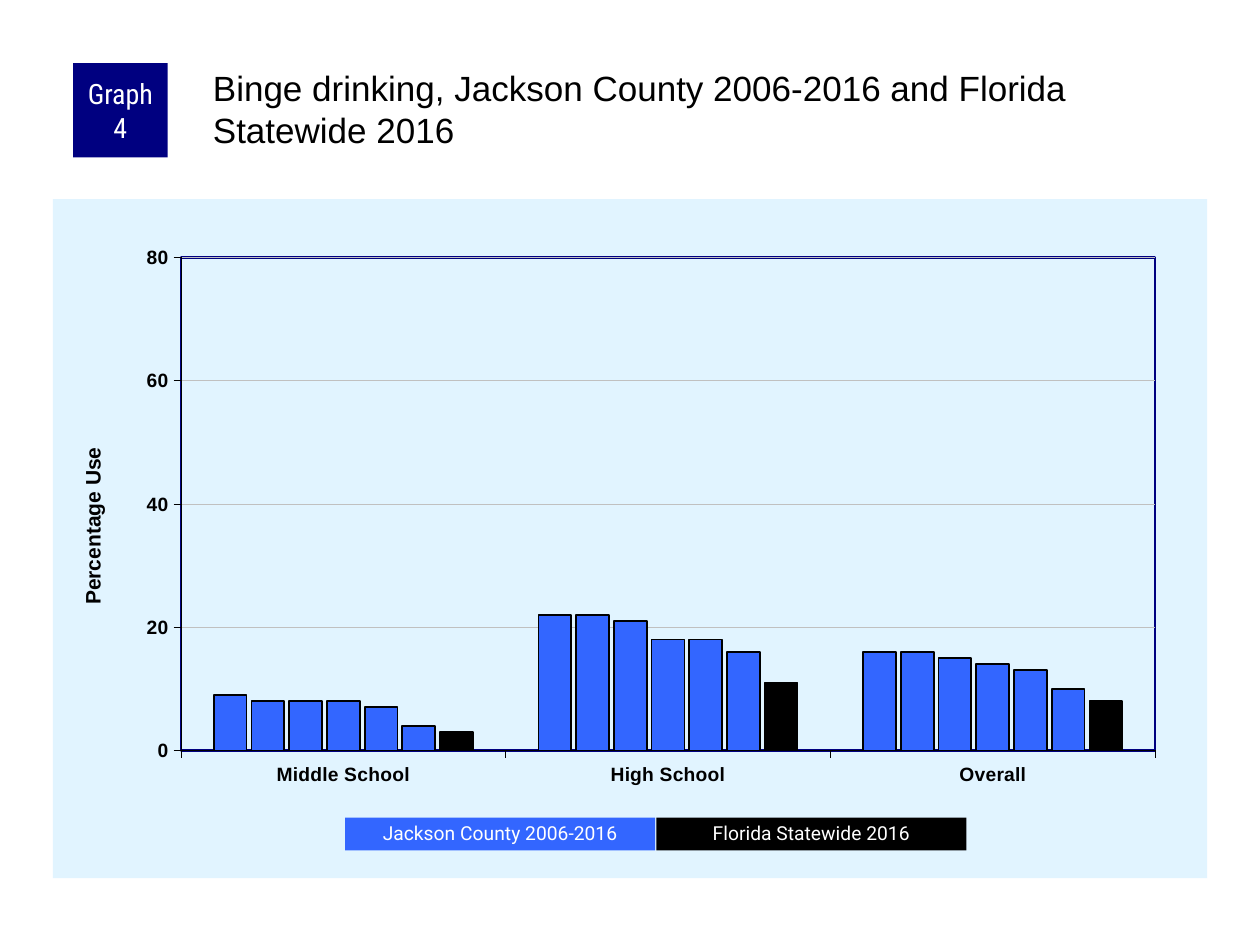
from lxml.etree import SubElement
from pptx import Presentation
from pptx.chart.data import CategoryChartData
from pptx.dml.color import RGBColor
from pptx.enum.chart import XL_CHART_TYPE, XL_TICK_MARK
from pptx.enum.shapes import MSO_SHAPE
from pptx.enum.text import MSO_ANCHOR, PP_ALIGN
from pptx.oxml import parse_xml
from pptx.oxml.ns import nsdecls, qn
from pptx.util import Inches, Pt

COLORS = {
    "black": "000000",
    "white": "FFFFFF",
    "navy": "000080",
    "blue": "3366FF",
    "panel": "E1F4FF",
    "grid": "C0C0C0",
}
SCHOOLS = ["Middle School", "High School", "Overall"]
COUNTY = [(9, 22, 16), (8, 22, 16), (8, 21, 15), (8, 18, 14), (7, 18, 13), (4, 16, 10)]
STATE = (3, 11, 8)


def rgb(name):
    """Return the named palette colour."""
    return RGBColor.from_string(COLORS[name])


def style_font(font, name, size, color, bold=False):
    """Set typeface, size, colour and weight of a font."""
    font.name, font.size, font.bold = name, Pt(size), bold
    font.color.rgb = rgb(color)


def style_line(line, color, width):
    """Set colour and width of a line."""
    line.color.rgb = rgb(color)
    line.width = Pt(width)


def manual_layout(**values):
    """Return a chart layout element placed by fractions of the chart."""
    layout = parse_xml(f"<c:layout {nsdecls('c')}/>")
    manual = SubElement(layout, qn("c:manualLayout"))
    for tag, value in values.items():
        SubElement(manual, qn(f"c:{tag}")).set("val", str(value))
    return layout


def area_properties(fill, line):
    """Return shape properties for a chart or plot area."""
    outline = f'<a:ln w="{Pt(1.5)}">{fill_xml(line)}</a:ln>' if line else "<a:ln><a:noFill/></a:ln>"
    return parse_xml(f"<c:spPr {nsdecls('c', 'a')}>{fill_xml(fill)}{outline}</c:spPr>")


def fill_xml(name):
    """Return the markup of a solid fill, or of no fill."""
    if name is None:
        return "<a:noFill/>"
    return f'<a:solidFill><a:srgbClr val="{COLORS[name]}"/></a:solidFill>'


def style_axis(axis):
    """Apply the tick, line and label style shared by both axes."""
    axis.major_tick_mark = XL_TICK_MARK.OUTSIDE
    axis.minor_tick_mark = XL_TICK_MARK.NONE
    style_line(axis.format.line, "black", 0.25)
    style_font(axis.tick_labels.font, "Arial", 11, "black", True)


def style_value_axis(axis):
    """Set the scale, gridlines and title of the percentage axis."""
    axis.minimum_scale, axis.maximum_scale, axis.major_unit = 0, 80, 20
    axis.has_major_gridlines = True
    style_line(axis.major_gridlines.format.line, "grid", 0.25)
    axis.tick_labels.number_format = "0"
    axis.tick_labels.number_format_is_linked = False
    frame = axis.axis_title.text_frame
    frame.text = "Percentage Use"
    style_font(frame.paragraphs[0].font, "Arial", 12, "black", True)
    title = axis.axis_title._element
    for layout in title.findall(qn("c:layout")):
        title.remove(layout)
    title.find(qn("c:tx")).addnext(manual_layout(xMode="edge", yMode="edge", x=0.02, y=0.36))


def add_use_chart(slide):
    """Add the clustered columns of percentage use."""
    data = CategoryChartData()
    data.categories = SCHOOLS
    for number, values in enumerate([*COUNTY, STATE], 1):
        data.add_series(f"Series {number}", values)
    chart = slide.shapes.add_chart(
        XL_CHART_TYPE.COLUMN_CLUSTERED,
        Inches(0.42), Inches(1.58), Inches(9.16), Inches(5.39), data,
    ).chart
    chart.has_title = chart.has_legend = False
    style_font(chart.font, "Arial", 8, "black")
    for axis in (chart.category_axis, chart.value_axis):
        style_axis(axis)
    style_value_axis(chart.value_axis)

    plot = chart.plots[0]
    plot.gap_width, plot.overlap, plot.vary_by_categories = 200, -15, False
    for index, series in enumerate(plot.series):
        series.format.fill.solid()
        series.format.fill.fore_color.rgb = rgb("blue" if index < len(COUNTY) else "black")
        style_line(series.format.line, "black", 1)
        series.invert_if_negative = False

    chart_element = chart._chartSpace.find(qn("c:chart"))
    chart_element.addnext(area_properties("panel", None))
    plot_area = chart_element.find(qn("c:plotArea"))
    for layout in plot_area.findall(qn("c:layout")):
        plot_area.remove(layout)
    plot_area.insert(0, manual_layout(
        layoutTarget="inner", xMode="edge", yMode="edge", x=0.111, y=0.086, w=0.844, h=0.726,
    ))
    plot_area.append(area_properties(None, "navy"))


def add_label_box(slide, text, box, fill, font_name, size, margins=(0.1, 0.05), spacing=1.0):
    """Add a filled rectangle with centred white text."""
    shape = slide.shapes.add_shape(MSO_SHAPE.RECTANGLE, *map(Inches, box))
    shape.shadow.inherit = False
    shape.fill.solid()
    shape.fill.fore_color.rgb = rgb(fill)
    shape.line.fill.background()
    frame = shape.text_frame
    frame.word_wrap = True
    frame.vertical_anchor = MSO_ANCHOR.MIDDLE
    frame.margin_left = frame.margin_right = Inches(margins[0])
    frame.margin_top = frame.margin_bottom = Inches(margins[1])
    frame.text = text
    paragraph = frame.paragraphs[0]
    paragraph.alignment = PP_ALIGN.CENTER
    paragraph.line_spacing = spacing
    style_font(paragraph.font, font_name, size, "white")


def add_heading(slide, text):
    """Add the slide heading."""
    shape = slide.shapes.add_textbox(Inches(1.66), Inches(0.5), Inches(7.92), Inches(0.83))
    frame = shape.text_frame
    frame.word_wrap = True
    frame.margin_left = frame.margin_top = Inches(0.03)
    frame.margin_right = frame.margin_bottom = 0
    frame.text = text
    style_font(frame.paragraphs[0].font, "Arial", 20, "black")


def main():
    """Build and save the slide."""
    presentation = Presentation()
    presentation.slide_width, presentation.slide_height = Inches(10), Inches(7.5)
    slide = presentation.slides.add_slide(presentation.slide_layouts[6])
    add_use_chart(slide)
    add_label_box(slide, "Graph 4", (0.58, 0.5, 0.75, 0.75), "navy",
                  "Roboto Condensed", 16, margins=(0.05, 0))
    add_heading(slide, "Binge drinking, Jackson County 2006-2016 and Florida Statewide 2016")
    legend = [("Jackson County 2006-2016", "blue"), ("Florida Statewide 2016", "black")]
    for index, (text, fill) in enumerate(legend):
        add_label_box(slide, text, (2.74 + index * 2.47, 6.49, 2.46, 0.26), fill,
                      "Roboto", 11, spacing=0.9)
    presentation.save("out.pptx")


if __name__ == "__main__":
    main()
